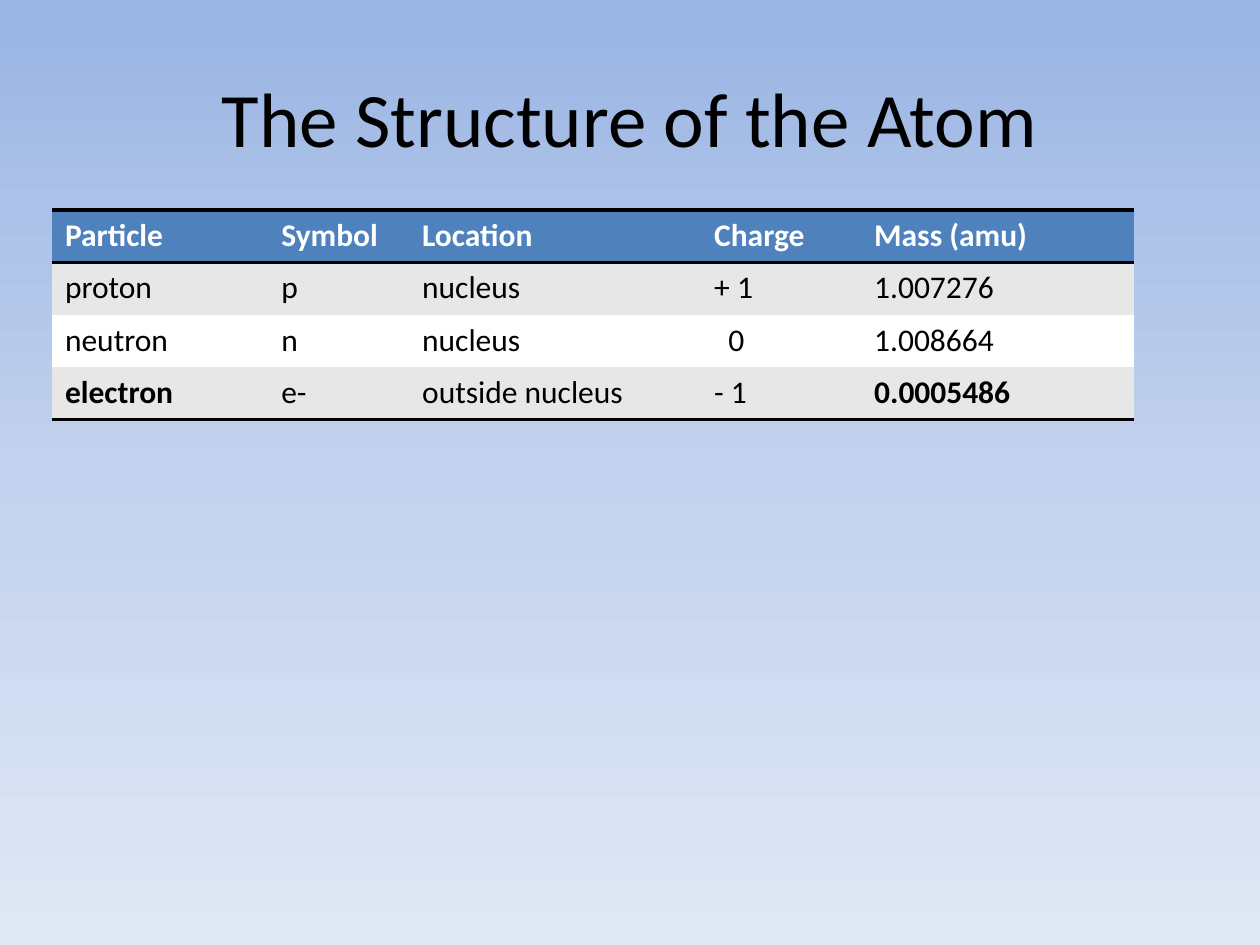
from copy import deepcopy
from dataclasses import dataclass

from lxml import etree
from pptx import Presentation
from pptx.dml.color import RGBColor
from pptx.enum import text
from pptx.oxml import ns
from pptx.util import Pt

BLACK = RGBColor(0x00, 0x00, 0x00)
WHITE = RGBColor(0xFF, 0xFF, 0xFF)
HEADER_BLUE = RGBColor(0x4F, 0x81, 0xBD)
BAND_GREY = RGBColor(0xE7, 0xE7, 0xE7)
SKY = (
    (0, RGBColor(0x9A, 0xB5, 0xE4)),
    (0.5, RGBColor(0xC2, 0xD1, 0xED)),
    (1, RGBColor(0xE1, 0xE8, 0xF5)),
)
FONT = "Calibri"
PLAIN_TABLE = "{2D5ABB26-0587-4C30-8999-92F81FD0307C}"
COLUMN_WIDTHS = (123.6, 80.5, 166.9, 91.4, 155.9)
ROW_HEIGHT = 30
ZERO_INDENT = 15.3


@dataclass(frozen=True)
class ParticleRow:
    values: tuple[str, ...]
    fill: RGBColor
    color: RGBColor = BLACK
    bold_columns: tuple[int, ...] = ()
    rules: tuple[str, ...] = ()


ROWS = (
    ParticleRow(("Particle", "Symbol", "Location", "Charge", "Mass (amu)"),
                HEADER_BLUE, WHITE, (0, 1, 2, 3, 4), ("lnT", "lnB")),
    ParticleRow(("proton", "p", "nucleus", "+ 1", "1.007276"), BAND_GREY),
    ParticleRow(("neutron", "n", "nucleus", "0", "1.008664"), WHITE),
    ParticleRow(("electron", "e-", "outside nucleus", "- 1", "0.0005486"),
                BAND_GREY, bold_columns=(0, 4), rules=("lnB",)),
)


def paint_background(page) -> None:
    fill = page.background.fill
    fill.gradient()
    fill.gradient_angle = 270
    stop_list = page.element.find(".//" + ns.qn("a:gsLst"))
    stop_list.append(deepcopy(stop_list[0]))
    for stop, (position, color) in zip(fill.gradient_stops, SKY):
        stop.position = position
        stop.color.rgb = color


def set_title(page, wording: str) -> None:
    title = page.shapes.title
    title.left, title.top, title.width, title.height = Pt(36), Pt(21.6), Pt(648), Pt(90)
    title.text_frame.text = wording
    title.text_frame.vertical_anchor = text.MSO_ANCHOR.MIDDLE
    para = title.text_frame.paragraphs[0]
    para.alignment = text.PP_ALIGN.CENTER
    para.font.name, para.font.size = FONT, Pt(44)
    para.font.color.rgb = BLACK


def add_rule(cell, side: str) -> None:
    properties = cell._tc.get_or_add_tcPr()
    line = etree.SubElement(properties, ns.qn(f"a:{side}"), w=str(Pt(2)))
    solid = etree.SubElement(line, ns.qn("a:solidFill"))
    etree.SubElement(solid, ns.qn("a:srgbClr"), val=str(BLACK))


def fill_cell(cell, row: ParticleRow, column: int) -> None:
    for side in row.rules:
        add_rule(cell, side)
    cell.fill.solid()
    cell.fill.fore_color.rgb = row.fill
    cell.text = row.values[column]
    if cell.text == "0":
        cell.margin_left = Pt(ZERO_INDENT)
    font = cell.text_frame.paragraphs[0].font
    font.name, font.size = FONT, Pt(18)
    font.bold = column in row.bold_columns
    font.color.rgb = row.color


def add_particle_table(page) -> None:
    frame = page.shapes.add_table(
        len(ROWS), len(COLUMN_WIDTHS), Pt(30), Pt(120),
        Pt(sum(COLUMN_WIDTHS)), Pt(ROW_HEIGHT * len(ROWS)))
    table = frame.table
    frame.element.find(".//" + ns.qn("a:tableStyleId")).text = PLAIN_TABLE
    for column, width in zip(table.columns, COLUMN_WIDTHS):
        column.width = Pt(width)
    for table_row, row in zip(table.rows, ROWS):
        table_row.height = Pt(ROW_HEIGHT)
        for column, cell in enumerate(table_row.cells):
            fill_cell(cell, row, column)


def main() -> None:
    deck = Presentation()
    deck.slide_width, deck.slide_height = Pt(720), Pt(540)
    page = deck.slides.add_slide(deck.slide_layouts.get_by_name("Title Only"))
    paint_background(page)
    set_title(page, "The Structure of the Atom")
    add_particle_table(page)
    deck.save("out.pptx")


if __name__ == "__main__":
    main()
